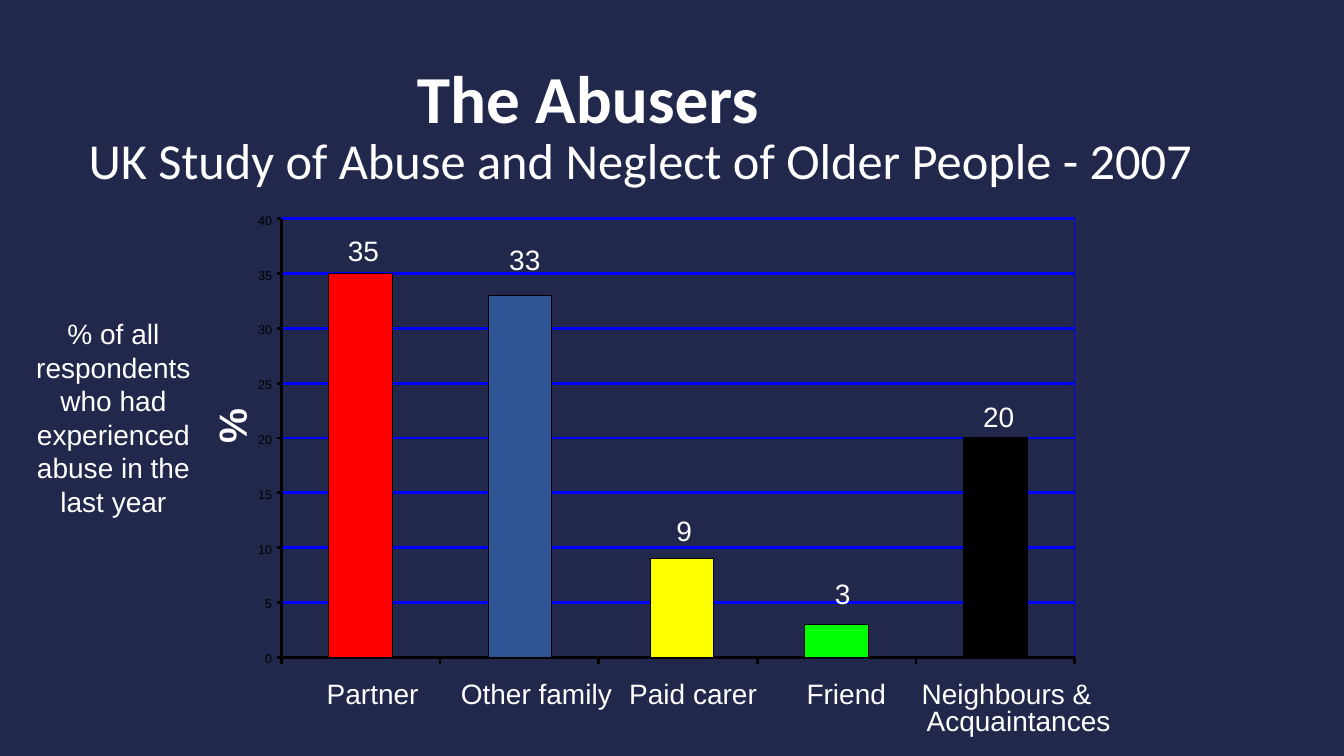
"""Build a slide with a drawn bar chart of who abuses older people."""
from dataclasses import dataclass

from lxml import etree
from pptx import Presentation
from pptx.dml.color import RGBColor
from pptx.enum.shapes import MSO_CONNECTOR, MSO_SHAPE
from pptx.enum.text import MSO_AUTO_SIZE, PP_ALIGN
from pptx.oxml.ns import qn
from pptx.util import Inches, Pt

STRAIGHT = MSO_CONNECTOR.STRAIGHT
RECT = MSO_SHAPE.RECTANGLE
GROW = MSO_AUTO_SIZE.SHAPE_TO_FIT_TEXT
LEFT = PP_ALIGN.LEFT
CENTER = PP_ALIGN.CENTER


@dataclass(frozen=True)
class Theme:
    """Colours, fonts and type sizes of the slide."""
    back: str = "21284C"
    text: str = "FFFFFF"
    axis: str = "000000"
    grid: str = "0000FF"
    head: str = "Calibri"
    body: str = "Arial"
    title: int = 48
    sub: int = 36
    unit: int = 28
    label: int = 20
    tick: int = 9
    edge: float = 0.63
    hair: float = 0


THEME = Theme()
X0, Y0, WIDE, HIGH = 2.79, 2.17, 7.87, 4.35
X1, Y1 = X0 + WIDE, Y0 + HIGH
TOP, STEP = 40, 5
BAR = 0.63
LINE = 0.34
ROW = 6.71
BARS = [
    (35, "FF0000", 3.26, (3.45, 2.32), [("Partner", 3.24, 0.92)]),
    (33, "2F5597", 4.84, (5.05, 2.41), [("Other family", 4.57, 1.59)]),
    (9, "FFFF00", 6.45, (6.71, 5.09), [("Paid carer", 6.24, 1.28)]),
    (3, "00FF00", 7.98, (8.28, 5.72), [("Friend", 8.0, 0.8)]),
    (20, "000000", 9.56, (9.75, 3.96),
     [("Neighbours &", 9.14, 1.7), ("Acquaintances", 9.19, 1.84)]),
]


def level(value):
    """Return the height on the slide of a value on the scale."""
    return Y1 - value * HIGH / TOP


def stroke(line, color, width):
    """Set the colour and width of a line."""
    line.color.rgb = RGBColor.from_string(color)
    line.width = Pt(width)


def add_line(slide, start, end, color):
    """Add a hairline between two points."""
    line = slide.shapes.add_connector(STRAIGHT, *map(Inches, start + end))
    stroke(line.line, color, THEME.hair)
    etree.SubElement(line.element.spPr, qn("a:effectLst"))


def add_box(shapes, box, edge, fill=None):
    """Add a rectangle with an outline and, if given, a fill."""
    shape = shapes.add_shape(RECT, *map(Inches, box))
    shape.shadow.inherit = False
    stroke(shape.line, edge, THEME.edge)
    if fill is None:
        shape.fill.background()
    else:
        shape.fill.solid()
        shape.fill.fore_color.rgb = RGBColor.from_string(fill)


def add_text(shapes, text, box, size, color=THEME.text, face=THEME.body,
             bold=False, align=LEFT, wrap=False, inset=False):
    """Add one paragraph of text in a box and return the shape."""
    shape = shapes.add_textbox(*map(Inches, box))
    frame = shape.text_frame
    frame.word_wrap = wrap
    frame.auto_size = GROW
    if not inset:
        frame.margin_left = frame.margin_right = 0
        frame.margin_top = frame.margin_bottom = 0
    frame.text = text
    para = frame.paragraphs[0]
    para.alignment = align
    font = para.runs[0].font
    font.size = Pt(size)
    font.color.rgb = RGBColor.from_string(color)
    font.name = face
    font.bold = bold
    return shape


def add_grid(slide):
    """Add the grid, the frame, both axes and their ticks."""
    steps = [level(value) for value in range(0, TOP + 1, STEP)]
    for y in steps[1:]:
        add_line(slide, (X0, y), (X1, y), THEME.grid)
    add_box(slide.shapes, (X0, Y0, WIDE, HIGH), THEME.grid)
    add_line(slide, (X0, Y0), (X0, Y1), THEME.axis)
    for y in steps:
        add_line(slide, (X0 - 0.04, y), (X0, y), THEME.axis)
    add_line(slide, (X0, Y1), (X1, Y1), THEME.axis)
    for i in range(len(BARS) + 1):
        x = X0 + i * WIDE / len(BARS)
        add_line(slide, (x, Y1 + 0.07), (x, Y1), THEME.axis)


def add_scale(slide):
    """Add the numbers beside the value axis."""
    for value in range(0, TOP + 1, STEP):
        text = str(value)
        wide = 0.07 * len(text)
        add_text(slide.shapes, text, (2.7 - wide, level(value) - 0.06, wide, 0.15),
                 THEME.tick, THEME.axis)


def add_bar(slide, value, color, left, spot, names):
    """Add a group of one bar, its value and its name."""
    shapes = slide.shapes.add_group_shape().shapes
    y = level(value)
    add_box(shapes, (left, y, BAR, Y1 - y), THEME.axis, color)
    text = str(value)
    add_text(shapes, text, (*spot, 0.155 * len(text), LINE), THEME.label)
    for i, (name, x, wide) in enumerate(names):
        add_text(shapes, name, (x, ROW + i * 0.27, wide, LINE), THEME.label)


def main():
    """Build the slide and save it."""
    deck = Presentation()
    deck.slide_width = Inches(13.33)
    deck.slide_height = Inches(7.5)
    slide = deck.slides.add_slide(deck.slide_layouts[6])
    fill = slide.background.fill
    fill.solid()
    fill.fore_color.rgb = RGBColor.from_string(THEME.back)
    add_grid(slide)
    shapes = slide.shapes
    add_text(shapes, "The Abusers", (3.26, 0.56, 5.14, 0.81), THEME.title,
             face=THEME.head, bold=True, align=CENTER, wrap=True)
    add_scale(slide)
    for bar in BARS:
        add_bar(slide, *bar)
    unit = add_text(shapes, "%", (2.12, 3.99, 0.35, 0.47), THEME.unit, bold=True)
    unit.rotation = 270
    add_text(shapes, "% of all respondents who had experienced abuse in the last year",
             (0.23, 3.09, 1.79, 2.12), THEME.label, align=CENTER, wrap=True, inset=True)
    add_text(shapes, "UK Study of Abuse and Neglect of Older People - 2007",
             (0.78, 1.23, 11.25, 0.71), THEME.sub, face=THEME.head, inset=True)
    deck.save("out.pptx")


if __name__ == "__main__":
    main()
